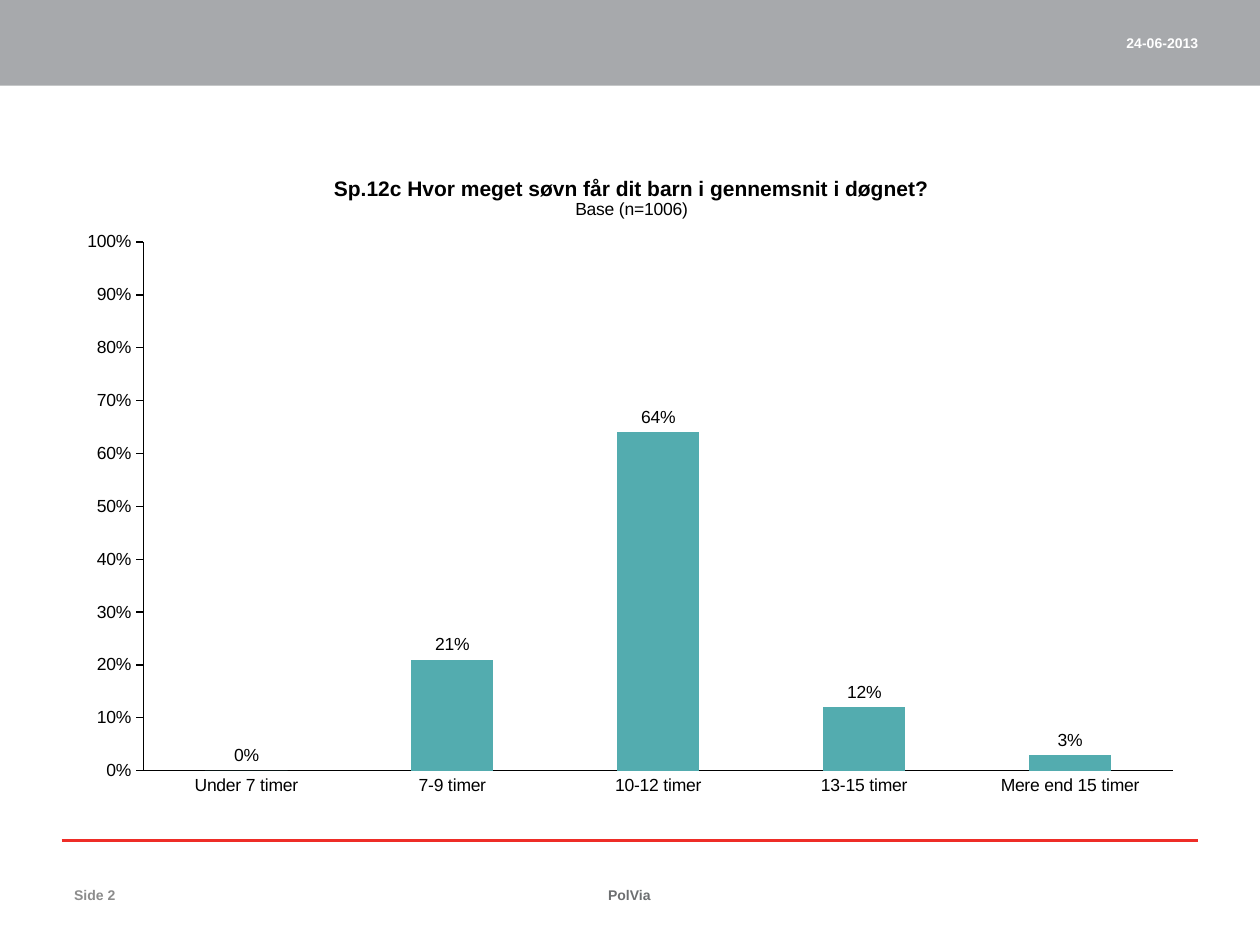
from lxml import etree
from pptx import Presentation
from pptx.chart.data import CategoryChartData
from pptx.dml.color import RGBColor
from pptx.enum.chart import XL_CHART_TYPE, XL_LABEL_POSITION, XL_TICK_MARK
from pptx.enum.shapes import MSO_CONNECTOR, MSO_SHAPE
from pptx.enum.text import MSO_ANCHOR, PP_ALIGN
from pptx.oxml.ns import qn
from pptx.util import Inches, Pt

COLUMN = XL_CHART_TYPE.COLUMN_CLUSTERED
OUTSIDE_END = XL_LABEL_POSITION.OUTSIDE_END
TICK_NONE, TICK_OUT = XL_TICK_MARK.NONE, XL_TICK_MARK.OUTSIDE
LEFT, CENTER, RIGHT = PP_ALIGN.LEFT, PP_ALIGN.CENTER, PP_ALIGN.RIGHT

BLACK = RGBColor(0x00, 0x00, 0x00)
WHITE = RGBColor(0xFF, 0xFF, 0xFF)
BAND_GRAY = RGBColor(0xA7, 0xA9, 0xAC)
FOOTER_GRAY = RGBColor(0x6D, 0x6F, 0x71)
NUMBER_GRAY = RGBColor(0x8C, 0x8C, 0x8C)
RED = RGBColor(0xEE, 0x2D, 0x27)
TEAL = RGBColor(0x53, 0xAC, 0xAF)

FONT = "Arial"
WIDTH, HEIGHT = 10, 7.5
MARGIN = 0.49
FOOTER_TOP = 6.9

TITLE = "Sp.12c Hvor meget søvn får dit barn i gennemsnit i døgnet?"
BASE = "Base (n=1006)"
SLEEP_SHARES = {
    "Under 7 timer": 0,
    "7-9 timer": 0.21,
    "10-12 timer": 0.64,
    "13-15 timer": 0.12,
    "Mere end 15 timer": 0.03,
}


def set_font(font, size, color=BLACK, bold=False):
    font.name = FONT
    font.size = Pt(size)
    font.bold = bold
    font.color.rgb = color


def add_header_band(s):
    sp = s.shapes.add_shape(MSO_SHAPE.RECTANGLE, 0, 0, Inches(WIDTH), Inches(0.68))
    sp.shadow.inherit = False
    sp.fill.solid()
    sp.fill.fore_color.rgb = BAND_GRAY
    sp.line.fill.background()


def add_footer_rule(s):
    y = Inches(6.67)
    line = s.shapes.add_connector(
        MSO_CONNECTOR.STRAIGHT, Inches(MARGIN), y, Inches(WIDTH - MARGIN), y)
    line.line.color.rgb = RED
    line.line.width = Pt(1.5)
    etree.SubElement(line._element.spPr, qn("a:effectLst"))


def add_label(s, text, left, top, width, align, color):
    sp = s.shapes.add_textbox(Inches(left), Inches(top), Inches(width), Inches(0.4))
    tf = sp.text_frame
    tf.word_wrap = True
    tf.vertical_anchor = MSO_ANCHOR.MIDDLE
    p = tf.paragraphs[0]
    p.text = text
    p.alignment = align
    set_font(p.runs[0].font, 8, color, bold=True)


def set_layout(parent, index, **values):
    """Place a chart part by shares of the chart's size."""
    for old in parent.findall(qn("c:layout")):
        parent.remove(old)
    layout = etree.Element(qn("c:layout"))
    manual = etree.SubElement(layout, qn("c:manualLayout"))
    for tag, value in values.items():
        etree.SubElement(manual, qn(f"c:{tag}")).set("val", str(value))
    parent.insert(index, layout)


def add_chart_title(chart):
    tf = chart.chart_title.text_frame
    tf.text = f"{TITLE}\n{BASE}"
    for p, size, bold in zip(tf.paragraphs, (12, 10), (True, False)):
        set_font(p.runs[0].font, size, bold=bold)
    chart.chart_title.include_in_layout = False
    set_layout(chart.chart_title._element, 1,
               xMode="edge", yMode="edge", x=0.235, y=0.04)


def format_axis(axis, tick):
    axis.has_major_gridlines = False
    axis.major_tick_mark = tick
    axis.minor_tick_mark = TICK_NONE
    axis.format.line.color.rgb = BLACK
    axis.format.line.width = Pt(0.75)
    set_font(axis.tick_labels.font, 10)


def add_sleep_chart(s):
    data = CategoryChartData(number_format="0%")
    data.categories = list(SLEEP_SHARES)
    data.add_series("Series 1", list(SLEEP_SHARES.values()))
    chart = s.shapes.add_chart(
        COLUMN, Inches(0.51), Inches(1.15), Inches(8.98), Inches(5.28), data).chart
    set_font(chart.font, 10)
    chart.has_legend = False
    add_chart_title(chart)

    format_axis(chart.category_axis, TICK_NONE)
    axis = chart.value_axis
    format_axis(axis, TICK_OUT)
    axis.minimum_scale, axis.maximum_scale, axis.major_unit = 0, 1, 0.1
    axis.tick_labels.number_format = "0%"
    axis.tick_labels.number_format_is_linked = False

    plot = chart.plots[0]
    plot.gap_width = 150
    plot.overlap = -17
    plot.vary_by_categories = False
    fill = plot.series[0].format.fill
    fill.solid()
    fill.fore_color.rgb = TEAL

    labels = plot.series[0].data_labels
    labels.show_value = True
    labels.position = OUTSIDE_END
    labels.number_format = "0%"
    labels.number_format_is_linked = False
    set_font(labels.font, 10)

    plot_area = chart._chartSpace.find(f".//{qn('c:plotArea')}")
    set_layout(plot_area, 0, layoutTarget="inner", xMode="edge", yMode="edge",
               x=0.07, y=0.146, w=0.91, h=0.795)


def main():
    prs = Presentation()
    prs.slide_width, prs.slide_height = Inches(WIDTH), Inches(HEIGHT)
    s = prs.slides.add_slide(prs.slide_layouts[6])
    add_header_band(s)
    add_footer_rule(s)
    add_label(s, "24-06-2013", 7.28, 0.14, 2.33, RIGHT, WHITE)
    add_label(s, "PolVia", 3.89, FOOTER_TOP, 2.21, CENTER, FOOTER_GRAY)
    add_label(s, "Side 2", MARGIN, FOOTER_TOP, 2.33, LEFT, NUMBER_GRAY)
    add_sleep_chart(s)
    prs.save("out.pptx")


if __name__ == "__main__":
    main()
